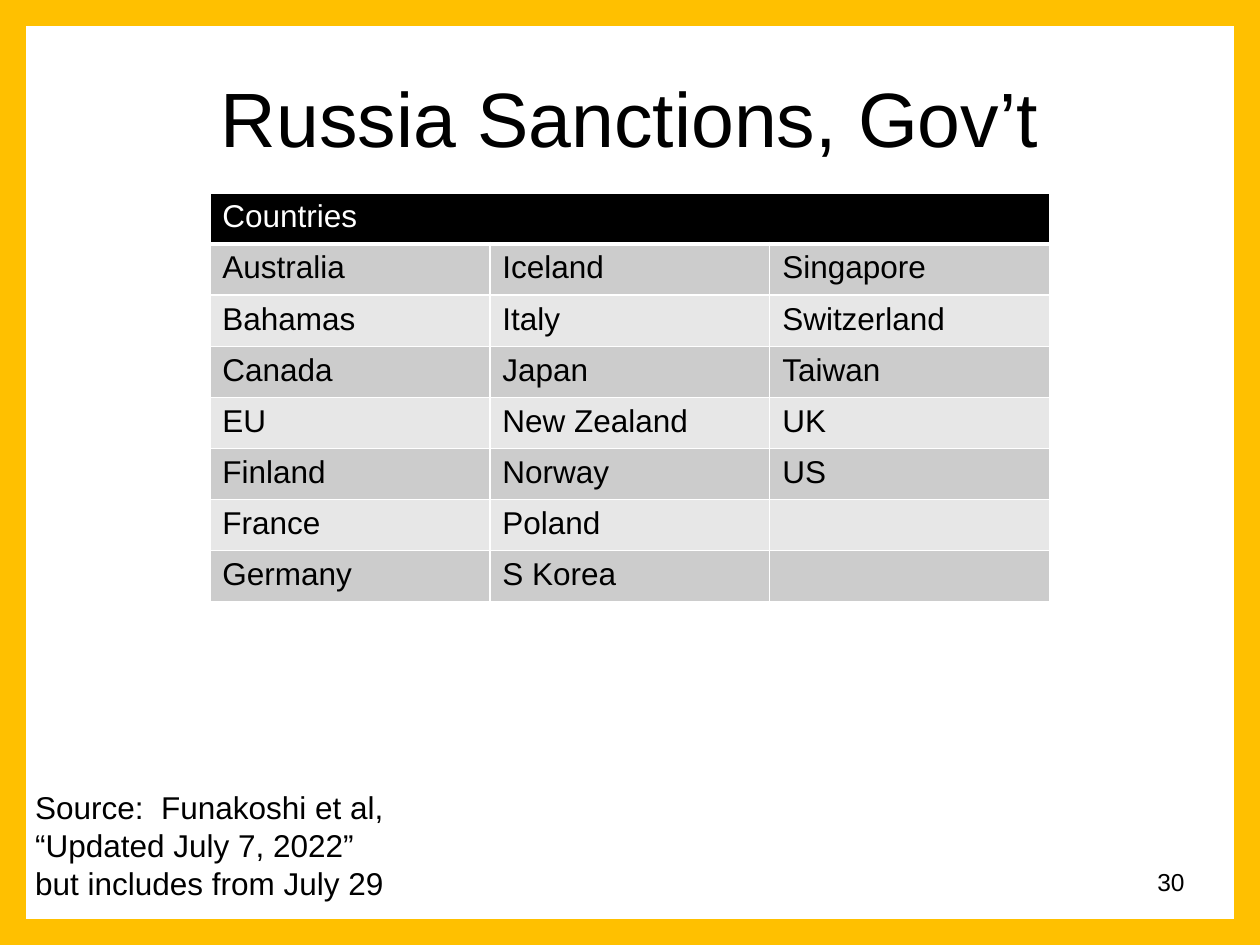
from dataclasses import dataclass

from lxml.etree import SubElement
from pptx import Presentation
from pptx.dml.color import RGBColor
from pptx.enum.shapes import MSO_SHAPE
from pptx.enum.text import MSO_ANCHOR, PP_ALIGN
from pptx.oxml.ns import qn
from pptx.util import Cm, Pt


@dataclass(frozen=True)
class Theme:
    font: str = "Arial"
    text: str = "000000"
    inverse: str = "FFFFFF"
    header: str = "000000"
    bands: tuple = ("CCCCCC", "E7E7E7")
    grid: str = "FFFFFF"
    frame: str = "FFC000"
    title_size: int = 44
    body_size: int = 18
    number_size: int = 14
    frame_width: int = 30
    grid_width: int = 1
    header_rule: int = 3


class SlideBuilder:
    def __init__(self, slide, theme):
        self.slide = slide
        self.theme = theme

    def style(self, paragraph, size, color):
        font = paragraph.font
        font.name = self.theme.font
        font.size = Pt(size)
        font.color.rgb = RGBColor.from_string(color)

    def text(self, words, left, top, width, height, size,
             align=PP_ALIGN.LEFT, anchor=MSO_ANCHOR.TOP):
        box = self.slide.shapes.add_textbox(Cm(left), Cm(top), Cm(width), Cm(height))
        frame = box.text_frame
        frame.word_wrap = True
        frame.vertical_anchor = anchor
        paragraph = frame.paragraphs[0]
        paragraph.text = words
        paragraph.alignment = align
        self.style(paragraph, size, self.theme.text)

    def cell(self, cell, words, fill, color, bottom):
        cell.text = words
        self.style(cell.text_frame.paragraphs[0], self.theme.body_size, color)
        # Borders come before the fill in the cell properties
        properties = cell._tc.get_or_add_tcPr()
        thin = self.theme.grid_width
        for side, width in (("L", thin), ("R", thin), ("T", thin), ("B", bottom)):
            line = SubElement(properties, qn(f"a:ln{side}"), w=str(Pt(width)))
            solid = SubElement(line, qn("a:solidFill"))
            SubElement(solid, qn("a:srgbClr"), val=self.theme.grid)
        cell.fill.solid()
        cell.fill.fore_color.rgb = RGBColor.from_string(fill)

    def table(self, heading, columns, left, top, width, row_height):
        theme = self.theme
        rows = max(len(column) for column in columns) + 1
        table = self.slide.shapes.add_table(
            rows, len(columns), Cm(left), Cm(top), Cm(width), Cm(row_height * rows)).table
        table.first_row = False
        table.horz_banding = False
        table.cell(0, 0).merge(table.cell(0, len(columns) - 1))
        for c, names in enumerate(columns):
            self.cell(table.cell(0, c), "" if c else heading,
                      theme.header, theme.inverse, theme.header_rule)
            for r in range(1, rows):
                name = names[r - 1] if r <= len(names) else ""
                self.cell(table.cell(r, c), name, theme.bands[(r - 1) % 2],
                          theme.text, theme.grid_width)

    def border(self, width, height):
        border = self.slide.shapes.add_shape(MSO_SHAPE.RECTANGLE, 0, 0, width, height)
        border.shadow.inherit = False
        border.fill.background()
        border.line.color.rgb = RGBColor.from_string(self.theme.frame)
        border.line.width = Pt(self.theme.frame_width)


COUNTRIES = (
    ("Australia", "Bahamas", "Canada", "EU", "Finland", "France", "Germany"),
    ("Iceland", "Italy", "Japan", "New Zealand", "Norway", "Poland", "S Korea"),
    ("Singapore", "Switzerland", "Taiwan", "UK", "US"),
)


def main():
    deck = Presentation()
    deck.slide_width, deck.slide_height = Cm(25.4), Cm(19.05)
    theme = Theme()
    builder = SlideBuilder(deck.slides.add_slide(deck.slide_layouts[6]), theme)

    # Slide number
    builder.text("30", 18.2, 17.35, 5.93, 1.32, theme.number_size, PP_ALIGN.RIGHT)

    # Countries with sanctions
    builder.table("Countries", COUNTRIES, 4.23, 3.89, 16.93, 1.03)

    # Title
    builder.text("Russia Sanctions, Gov’t", 1.27, 0.76, 22.86, 3.18,
                 theme.title_size, PP_ALIGN.CENTER, MSO_ANCHOR.MIDDLE)

    # Source
    builder.text("Source:  Funakoshi et al, “Updated July 7, 2022” but includes from July 29",
                 0.46, 15.77, 7.77, 2.57, theme.body_size)

    # Frame around the slide
    builder.border(deck.slide_width, deck.slide_height)

    deck.save("out.pptx")


if __name__ == "__main__":
    main()
